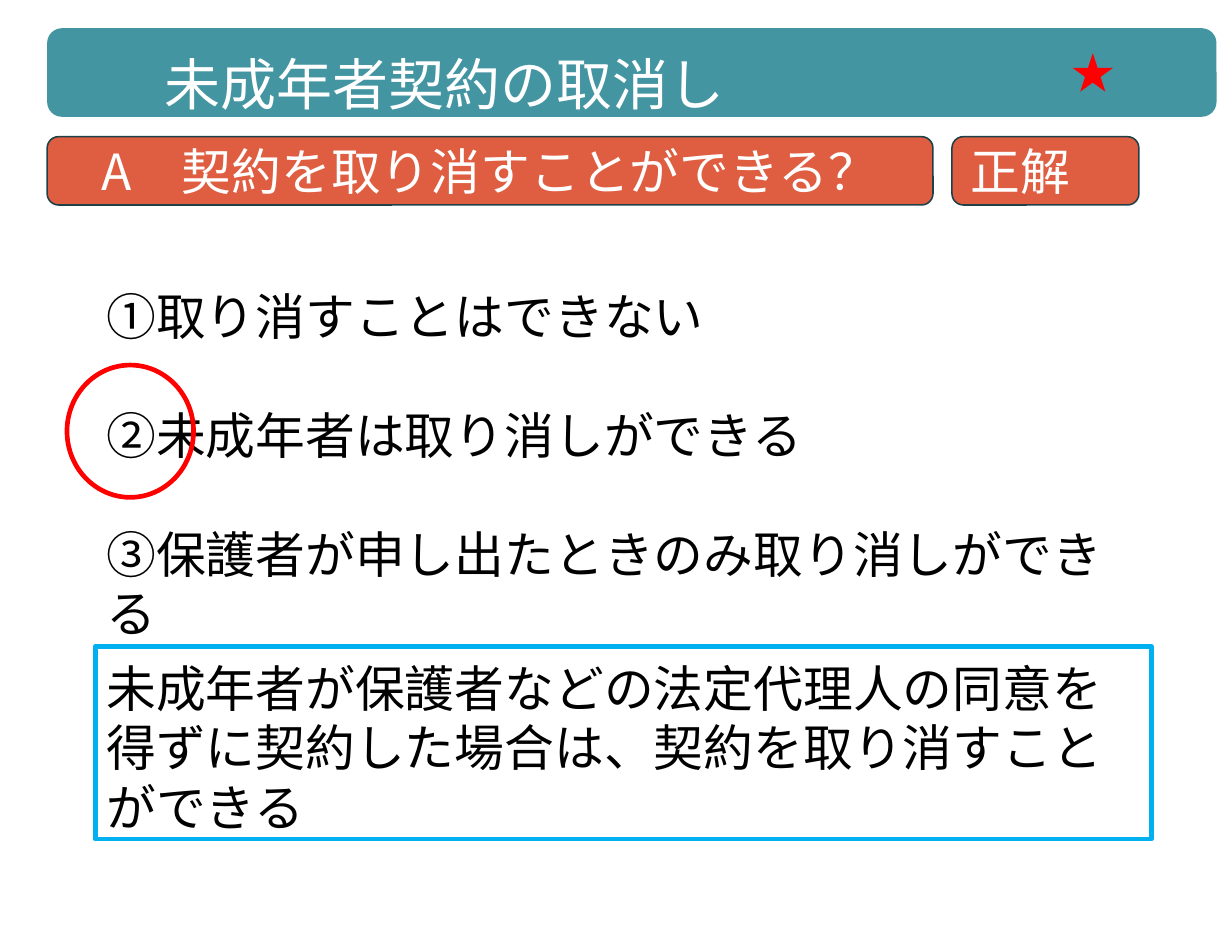
from dataclasses import dataclass
from typing import Optional

from lxml import etree
from pptx import Presentation
from pptx import util as u
from pptx.dml.color import RGBColor
from pptx.enum import shapes, text
from pptx.oxml.ns import qn

FONT = "Noto Sans CJK JP"
WHITE, BLACK, RED = "FFFFFF", "000000", "FF0000"
TEAL, ORANGE, NAVY, BLUE = "4495A2", "DF5D40", "1E4147", "00B0F0"
LINE_HEIGHT = 1.195
SHAPE = shapes.MSO_SHAPE


@dataclass
class Box:
    """Place of an element in centimetres."""
    left: float
    top: float
    width: float
    height: float

    def lengths(self) -> list:
        return [u.Cm(v) for v in (self.left, self.top, self.width, self.height)]


@dataclass
class Panel:
    kind: shapes.MSO_SHAPE
    box: Box
    fill: Optional[str] = None
    line: Optional[str] = None
    weight: float = 1
    label: str = ""


@dataclass
class Passage:
    box: Box
    lines: list
    size: int = 32
    color: str = BLACK
    gap: float = 0


HEADER = Panel(SHAPE.ROUNDED_RECTANGLE, Box(1.07, 0.64, 26.52, 2.01), TEAL)
BANNERS = [
    Panel(SHAPE.FLOWCHART_ALTERNATE_PROCESS, Box(left, 3.1, width, 1.55),
          ORANGE, NAVY, label=label)
    for left, width, label in [(1.07, 20.09, "A　契約を取り消すことができる？"),
                               (21.59, 4.24, "正解　")]
]
ANSWER_RING = Panel(SHAPE.FLOWCHART_CONNECTOR, Box(1.52, 8.28, 2.87, 3), line=RED, weight=3)
REASON_FRAME = Panel(SHAPE.RECTANGLE, Box(2.16, 14.66, 23.95, 4.37), line=BLUE, weight=3)

TITLE = Passage(Box(3.48, 0.86, 23.72, 1.8), ["未成年者契約の取消し"], 36, WHITE)
CHOICES = Passage(Box(2.16, 6.22, 24.13, 7.09), [
    "①取り消すことはできない",
    "②未成年者は取り消しができる",
    "③保護者が申し出たときのみ取り消しができる　",
], gap=32 * LINE_HEIGHT)
REASON = Passage(REASON_FRAME.box, [
    "未成年者が保護者などの法定代理人の同意を",
    "得ずに契約した場合は、契約を取り消すことができる",
])
STAR = Passage(Box(24.05, 0.79, 1.73, 1.45), ["★"], 28, RED)


def rgb(value: str) -> RGBColor:
    return RGBColor.from_string(value)


def style_paragraph(p, content: str, size: int, color: str) -> None:
    r = p.add_run()
    r.text = content
    r.font.name = FONT
    r.font.size = u.Pt(size)
    r.font.color.rgb = rgb(color)
    etree.SubElement(r.font._element, qn("a:ea")).set("typeface", FONT)


def write_passage(sp, passage: Passage) -> None:
    tf = sp.text_frame
    tf.word_wrap = True
    tf.auto_size = text.MSO_AUTO_SIZE.NONE
    tf.vertical_anchor = text.MSO_ANCHOR.TOP
    tf.margin_top = u.Cm(0.26)
    for i, line in enumerate(passage.lines):
        p = tf.add_paragraph() if i else tf.paragraphs[0]
        p.alignment = text.PP_ALIGN.LEFT
        p.line_spacing = u.Pt(passage.size * LINE_HEIGHT)
        p.space_before = u.Pt(passage.gap if i else 0)
        style_paragraph(p, line, passage.size, passage.color)


def add_panel(s, panel: Panel):
    sp = s.shapes.add_shape(panel.kind, *panel.box.lengths())
    sp.shadow.inherit = False
    if panel.fill:
        sp.fill.solid()
        sp.fill.fore_color.rgb = rgb(panel.fill)
    else:
        sp.fill.background()
    if panel.line:
        sp.line.color.rgb = rgb(panel.line)
        sp.line.width = u.Pt(panel.weight)
    else:
        sp.line.fill.background()
    if panel.label:
        tf = sp.text_frame
        tf.vertical_anchor = text.MSO_ANCHOR.MIDDLE
        tf.paragraphs[0].alignment = text.PP_ALIGN.CENTER
        style_paragraph(tf.paragraphs[0], panel.label, 32, WHITE)
    return sp


def add_passage(s, passage: Passage) -> None:
    write_passage(s.shapes.add_textbox(*passage.box.lengths()), passage)


def place_title(s, passage: Passage) -> None:
    """Fill the title placeholder and bring it in front of the header bar."""
    sp = s.shapes.title
    sp.left, sp.top, sp.width, sp.height = passage.box.lengths()
    write_passage(sp, passage)
    s.shapes._spTree.append(sp._element)


def main() -> None:
    prs = Presentation()
    prs.slide_width, prs.slide_height = u.Cm(27.94), u.Cm(21.59)
    s = prs.slides.add_slide(prs.slide_layouts[5])
    add_panel(s, HEADER)
    place_title(s, TITLE)
    for banner in BANNERS:
        add_panel(s, banner)
    add_passage(s, CHOICES)
    add_panel(s, ANSWER_RING)
    write_passage(add_panel(s, REASON_FRAME), REASON)
    add_passage(s, STAR)
    prs.save("out.pptx")


if __name__ == "__main__":
    main()
